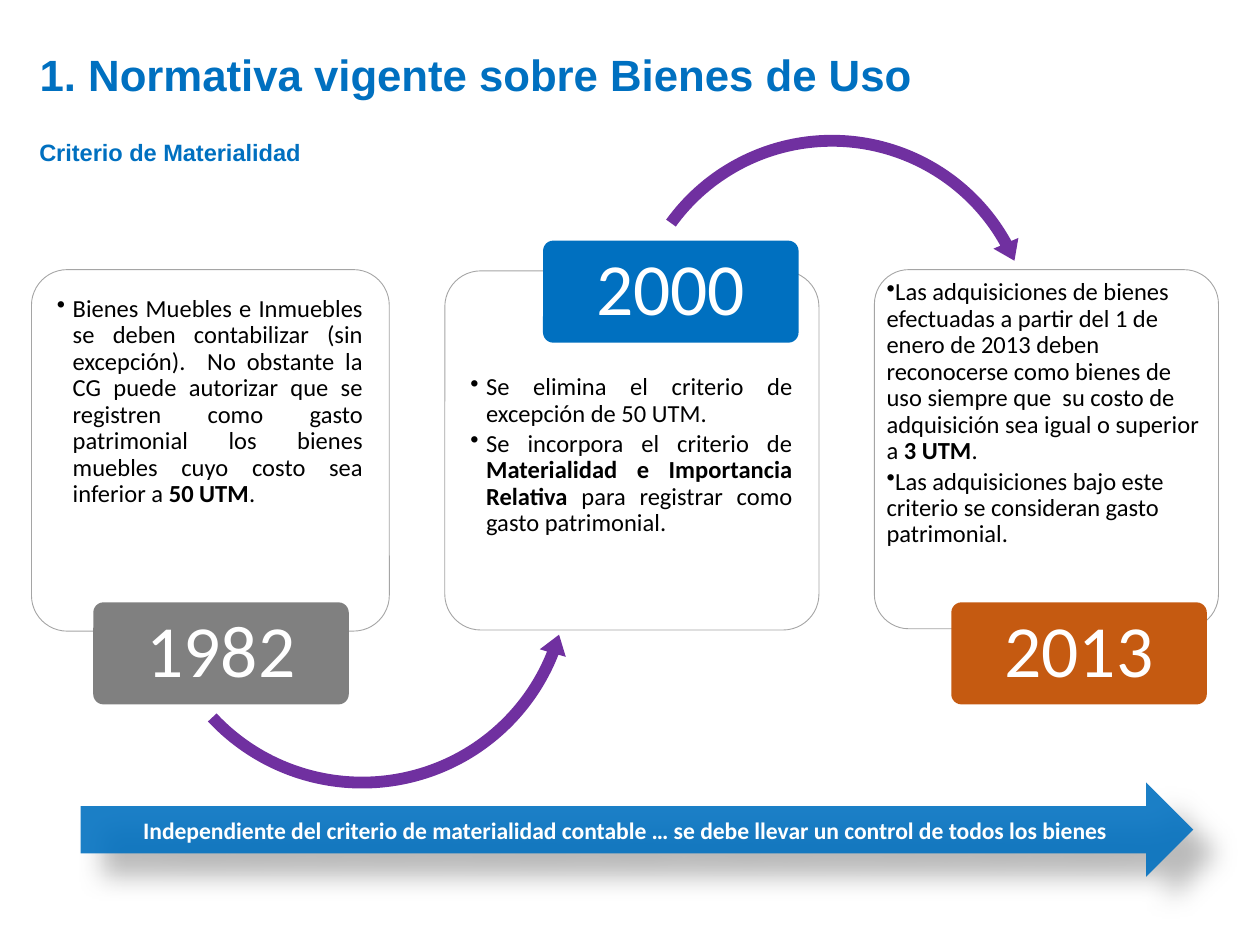
"""Build the slide on the materiality criterion for fixed assets."""
from dataclasses import dataclass

import pptx
import pptx.dml.color
import pptx.enum.shapes
import pptx.enum.text
import pptx.oxml
import pptx.oxml.ns
import pptx.slide
import pptx.util

Pt = pptx.util.Pt
RGB = pptx.dml.color.RGBColor.from_string
KIND = pptx.enum.shapes.MSO_SHAPE
ALIGN = pptx.enum.text.PP_ALIGN
ANCHOR = pptx.enum.text.MSO_ANCHOR
NS = pptx.oxml.ns.nsdecls("a")


@dataclass(frozen=True)
class Theme:
    heading_font: str = "Arial"
    body_font: str = "Calibri"
    blue: str = "0070C0"
    gray: str = "808080"
    orange: str = "C55A11"
    purple: str = "7030A0"
    outline: str = "A5A5A5"
    white: str = "FFFFFF"
    black: str = "000000"
    title_size: float = 25
    small_size: float = 13.5
    body_size: float = 14
    year_size: float = 42


@dataclass
class SlideBuilder:
    theme: Theme
    slide: pptx.slide.Slide

    def styled_run(self, paragraph, text, size, color, font, bold=False):
        run = paragraph.add_run()
        run.text = text
        run.font.size, run.font.name, run.font.bold = Pt(size), font, bold
        run.font.color.rgb = RGB(color)

    def frame(self, shape, margins, anchor):
        frame = shape.text_frame
        frame.word_wrap = True
        frame.auto_size = pptx.enum.text.MSO_AUTO_SIZE.NONE
        frame.vertical_anchor = anchor
        (frame.margin_left, frame.margin_top,
         frame.margin_right, frame.margin_bottom) = map(Pt, margins)
        return frame

    def shape(self, kind, box, fill, alpha=None):
        shape = self.slide.shapes.add_shape(kind, *map(Pt, box))
        shape.shadow.inherit = False
        shape.fill.solid()
        shape.fill.fore_color.rgb = RGB(fill)
        shape.line.fill.background()
        if alpha:
            color = shape._element.spPr.find(".//" + pptx.oxml.ns.qn("a:srgbClr"))
            color.append(pptx.oxml.parse_xml(f'<a:alpha {NS} val="{alpha * 1000}"/>'))
        return shape

    def title(self, box, text):
        title = self.slide.shapes.title
        title.left, title.top, title.width, title.height = map(Pt, box)
        paragraph = self.frame(title, (7.2, 3.6, 7.2, 3.6), ANCHOR.MIDDLE).paragraphs[0]
        paragraph.alignment = ALIGN.LEFT
        self.styled_run(paragraph, text, self.theme.title_size, self.theme.blue,
                        self.theme.heading_font, True)

    def subtitle(self, box, text):
        subtitle = self.slide.shapes.add_textbox(*map(Pt, box))
        paragraph = self.frame(subtitle, (5.2, 2.6, 5.2, 2.6), ANCHOR.TOP).paragraphs[0]
        paragraph.line_spacing = 0.9
        self.styled_run(paragraph, text, self.theme.small_size, self.theme.blue,
                        self.theme.heading_font, True)

    def card(self, box, margins, bullets, align, hanging):
        card = self.shape(KIND.ROUNDED_RECTANGLE, box, self.theme.white, alpha=90)
        card.adjustments[0] = 0.1
        card.line.color.rgb = RGB(self.theme.outline)
        card.line.width = Pt(0.5)
        frame = self.frame(card, margins, ANCHOR.TOP)
        for index, runs in enumerate(bullets):
            paragraph = frame.add_paragraph() if index else frame.paragraphs[0]
            properties = paragraph._p.get_or_add_pPr()
            properties.set("marL", str(Pt(hanging)))
            properties.set("indent", str(-Pt(hanging)))
            properties.append(pptx.oxml.parse_xml(f'<a:buChar {NS} char="•"/>'))
            paragraph.alignment = align
            paragraph.line_spacing = 0.9
            paragraph.space_after = Pt(2.1)
            for text, bold in runs:
                self.styled_run(paragraph, text, self.theme.body_size,
                                self.theme.black, self.theme.body_font, bold)

    def year(self, left, top, text, fill):
        badge = self.shape(KIND.ROUNDED_RECTANGLE, (left, top, 146, 58.3), fill)
        badge.adjustments[0] = 0.1
        paragraph = self.frame(badge, (6.5, 4.3, 6.5, 4.3), ANCHOR.MIDDLE).paragraphs[0]
        paragraph.alignment = ALIGN.CENTER
        paragraph.line_spacing = 0.9
        self.styled_run(paragraph, text, self.theme.year_size, self.theme.white,
                        self.theme.body_font)

    def arc(self, kind, left, top, size, thickness, degrees, head):
        arc = self.shape(kind, (left, top, size, size), self.theme.purple)
        values = [thickness / 100, *(angle * 0.6 for angle in degrees), head / 100]
        for index, value in enumerate(values):
            arc.adjustments[index] = value

    def banner(self, box, text):
        banner = self.shape(KIND.RIGHT_ARROW, box, self.theme.blue, alpha=89)
        effects = banner._element.spPr.find(pptx.oxml.ns.qn("a:effectLst"))
        effects.append(pptx.oxml.parse_xml(
            f'<a:outerShdw {NS} blurRad="{Pt(15)}" dist="{Pt(18)}" dir="{45 * 60000}" '
            f'algn="tl" rotWithShape="0"><a:srgbClr val="{self.theme.black}">'
            '<a:alpha val="30000"/></a:srgbClr></a:outerShdw>'))
        paragraph = self.frame(banner, (7.2, 3.6, 7.2, 3.6), ANCHOR.MIDDLE).paragraphs[0]
        paragraph.alignment = ALIGN.CENTER
        self.styled_run(paragraph, text, self.theme.small_size, self.theme.white,
                        self.theme.body_font, True)


def main():
    presentation = pptx.Presentation()
    presentation.slide_width, presentation.slide_height = Pt(720), Pt(540)
    theme = Theme()
    page = SlideBuilder(theme, presentation.slides.add_slide(presentation.slide_layouts[5]))

    page.title((15.5, 31, 700, 23), "1. Normativa vigente sobre Bienes de Uso")
    page.subtitle((17.3, 77.8, 343, 21), "Criterio de Materialidad")

    page.card((18, 154.1, 204.5, 206.6), (8.6, 9.2, 9, 0), [
        [("Bienes Muebles e Inmuebles se deben contabilizar (sin excepción).  No obstante "
          "la CG puede autorizar que se registren como gasto patrimonial los bienes "
          "muebles cuyo costo sea inferior a ", False), ("50 UTM", True), (".", False)],
    ], ALIGN.JUSTIFY, 9)
    page.arc(KIND.LEFT_CIRCULAR_ARROW, 82.1, 205.2, 249.8, 2.7, (5.44, 21.6, 136.98), 3.1)
    page.year(53.3, 344.2, "1982", theme.gray)

    page.card((254.2, 154.8, 213.8, 205.2), (8.6, 53.2, 9, 0), [
        [("Se elimina el criterio de excepción de 50 UTM.", False)],
        [("Se incorpora el criterio de ", False),
         ("Materialidad e Importancia Relativa ", True),
         ("para registrar como gasto patrimonial.", False)],
    ], ALIGN.JUSTIFY, 9)
    page.arc(KIND.CIRCULAR_ARROW, 354.2, 72.7, 242.6, 2.8, (5.61, 331.06, 215.85), 3.2)
    page.year(310.3, 137.5, "2000", theme.blue)

    page.card((499.7, 154.1, 196.6, 205.2), (1.2, 0, 0, 0), [
        [("Las adquisiciones de bienes efectuadas a partir del 1 de enero de 2013 deben "
          "reconocerse como bienes de uso siempre que  su costo de adquisición sea igual "
          "o superior a ", False), ("3 UTM", True), (".", False)],
        [("Las adquisiciones bajo este criterio se consideran gasto patrimonial.", False)],
    ], ALIGN.LEFT, 0)
    page.year(543.6, 344.2, "2013", theme.orange)

    page.banner((46.1, 447.1, 635.8, 54), "Independiente del criterio de materialidad "
                "contable … se debe llevar un control de todos los bienes")
    presentation.save("out.pptx")


if __name__ == "__main__":
    main()
